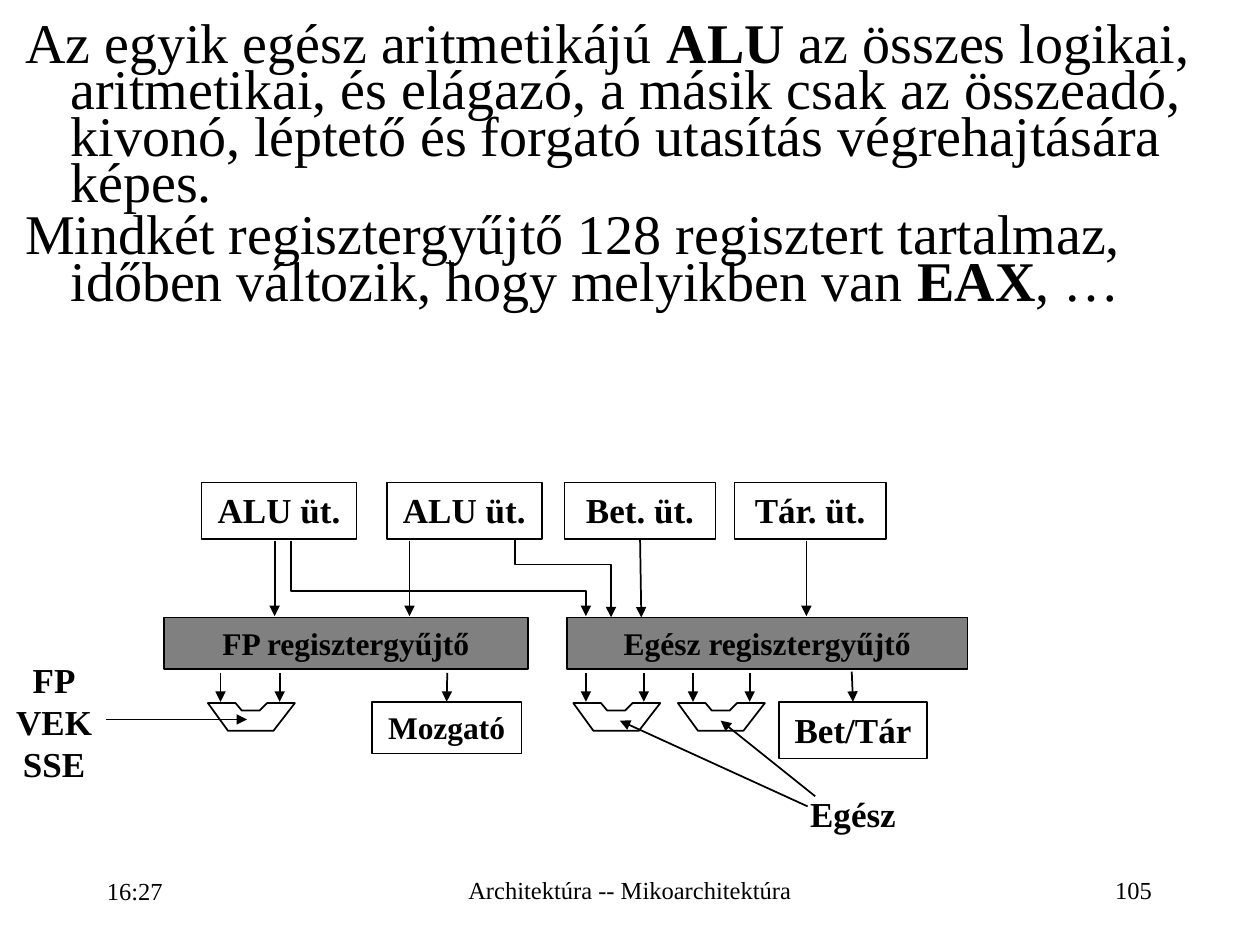
from lxml import etree
from pptx import Presentation
from pptx import util as u
from pptx.dml.color import RGBColor
from pptx.enum import shapes, text
from pptx.oxml.ns import qn

COLORS = {"ink": "000000", "register": "808080"}
INK = RGBColor.from_string(COLORS["ink"])
FONT = "Times New Roman"
LEFT, CENTER, RIGHT = text.PP_ALIGN.LEFT, text.PP_ALIGN.CENTER, text.PP_ALIGN.RIGHT

prs = Presentation()
prs.slide_width, prs.slide_height = u.Inches(10), u.Inches(7.5)
s = prs.slides.add_slide(prs.slide_layouts[6])

# Grid of 100 columns by 75 rows
COL = prs.slide_width // 100
ROW = prs.slide_height // 75


def write(sp, paragraphs, size, align=CENTER, bold=True, inset=0, spacing=None):
    """Fill a shape with paragraphs, each a list of (words, bold) runs or one string."""
    tf = sp.text_frame
    tf.word_wrap = True
    tf.margin_left = tf.margin_right = int(inset * COL)
    tf.margin_top = tf.margin_bottom = ROW // 2
    tf.vertical_anchor = text.MSO_ANCHOR.TOP
    for i, runs in enumerate(paragraphs):
        p = tf.paragraphs[0] if i == 0 else tf.add_paragraph()
        p.alignment = align
        if spacing:
            p.line_spacing = spacing
        for words, strong in [(runs, bold)] if isinstance(runs, str) else runs:
            r = p.add_run()
            r.text = words
            r.font.name, r.font.size, r.font.bold = FONT, u.Pt(size), strong
            r.font.color.rgb = INK
    return tf


def outline(sp, arrow=False):
    """Thin black line without shadow, with an arrowhead at the end if asked."""
    sp.line.color.rgb = INK
    sp.line.width = u.Pt(1)
    if arrow:
        etree.SubElement(sp.line._get_or_add_ln(), qn("a:tailEnd"), type="triangle",
                         w="med", len="med")
    pr = sp._element.spPr
    if pr.find(qn("a:effectLst")) is None:
        etree.SubElement(pr, qn("a:effectLst"))


# Body text with hanging indents
sp = s.shapes.add_textbox(2 * COL, int(2.1 * ROW), 98 * COL, int(34.8 * ROW))
tf = write(sp, [
    [("Az egyik egész aritmetikájú ", False), ("ALU", True),
     (" az összes logikai, aritmetikai, és elágazó, a másik csak az összeadó, "
      "kivonó, léptető és forgató utasítás végrehajtására képes.", False)],
    [("Mindkét regisztergyűjtő 128 regisztert tartalmaz, időben változik, "
      "hogy melyikben van ", False), ("EAX", True), (", …", False)],
], 32, LEFT, spacing=0.69)
tf.margin_top = tf.margin_bottom = 0
for p in tf.paragraphs:
    p.space_before = u.Pt(3.2)
    pPr = p._p.get_or_add_pPr()
    pPr.set("marL", str(int(3.6 * COL)))
    pPr.set("indent", str(-int(3.6 * COL)))

# Boxes: schedulers, register files, units (label, column, row, width, height, size, fill)
boxes = {}
for label, x, y, w, h, size, fill in [
    ("ALU üt.", 16, 38.3, 12.3, 4.5, 20, None),
    ("ALU üt.", 30.7, 38.3, 12.3, 4.5, 20, None),
    ("Bet. üt.", 44.8, 38.3, 12, 4.5, 20, None),
    ("Tár. üt.", 58.3, 38.3, 12, 4.5, 20, None),
    ("FP regisztergyűjtő", 13, 49, 28.9, 4.1, 18, "register"),
    ("Egész regisztergyűjtő", 45, 49, 31.8, 4.1, 18, "register"),
    ("Mozgató", 29.5, 55.7, 11.9, 4.1, 18, None),
    ("Bet/Tár", 61.8, 55.7, 11.8, 4.5, 20, None),
]:
    sp = s.shapes.add_shape(shapes.MSO_SHAPE.RECTANGLE, int(x * COL), int(y * ROW),
                            int(w * COL), int(h * ROW))
    sp.shadow.inherit = False
    if fill:
        sp.fill.solid()
        sp.fill.fore_color.rgb = RGBColor.from_string(COLORS[fill])
    else:
        sp.fill.background()
    outline(sp)
    write(sp, [label], size)
    boxes[label] = sp

# Arithmetic units and bent arrows
notch = [(0, 0), (2.2, 0), (2.7, 0.6), (4.1, 0.6), (4.7, 0), (6.9, 0), (5.2, 2.2), (1.6, 2.2)]
outlines = [([(x + dx, 55.8 + dy) for dx, dy in notch], True) for x in (16.5, 45.5, 53.8)]
outlines += [
    ([(23.1, 42.9), (23.1, 46.9), (46.5, 46.9), (46.5, 48.9)], False),
    ([(40.9, 42.8), (40.9, 44.8), (48.5, 44.8), (48.5, 49)], False),
]
for points, closed in outlines:
    points = [(int(x * COL), int(y * ROW)) for x, y in points]
    fb = s.shapes.build_freeform(*points[0])
    fb.add_line_segments(points[1:], close=closed)
    sp = fb.convert_to_shape()
    sp.fill.background()
    outline(sp, arrow=not closed)

# Straight arrows (from column, row, to column, row, box at start, box at end)
arrows = [(x, 42.9, x, 48.9, None, None) for x in (21.8, 32.5, 64)]
arrows += [(x, 53.4, x, 55.7, None, None) for x in (17.5, 22.2, 46.5, 51.1, 55, 59.5)]
arrows += [
    (50.8, 42.8, 50.9, 49, "Bet. üt.", None),
    (35.5, 53.4, 35.5, 55.7, None, "Mozgató"),
    (67.6, 53.3, 67.7, 55.7, None, "Bet/Tár"),
    (8.4, 57.1, 19.6, 57.1, None, None),
    (64.1, 64, 49.2, 57.2, None, None),
    (64.7, 63.2, 57.2, 57.2, None, None),
]
for x1, y1, x2, y2, start, end in arrows:
    sp = s.shapes.add_connector(shapes.MSO_CONNECTOR.STRAIGHT, int(x1 * COL), int(y1 * ROW),
                                int(x2 * COL), int(y2 * ROW))
    if start:
        sp.begin_connect(boxes[start], 2)
    if end:
        sp.end_connect(boxes[end], 0)
    outline(sp, arrow=True)

# Unit labels
for lines, x, y, h in [(["FP", "VEK", "SSE"], 0, 51.8, 11), (["Egész"], 63.4, 62.4, 4.3)]:
    sp = s.shapes.add_textbox(int(x * COL), int(y * ROW), int(8.6 * COL), int(h * ROW))
    write(sp, lines, 20)

# Footer
for words, x, y, w, h, align in [
    ("16:27", 7.5, 68.1, 20.7, 5.4, LEFT),
    ("Architektúra -- Mikoarchitektúra", 34.2, 68.3, 31.6, 4.9, CENTER),
    ("105", 71.7, 68.3, 20.7, 4.9, RIGHT),
]:
    sp = s.shapes.add_textbox(int(x * COL), int(y * ROW), int(w * COL), int(h * ROW))
    tf = write(sp, [words], 14, align, bold=False, inset=1, spacing=0.93)
    tf.vertical_anchor = text.MSO_ANCHOR.MIDDLE

prs.save("out.pptx")
